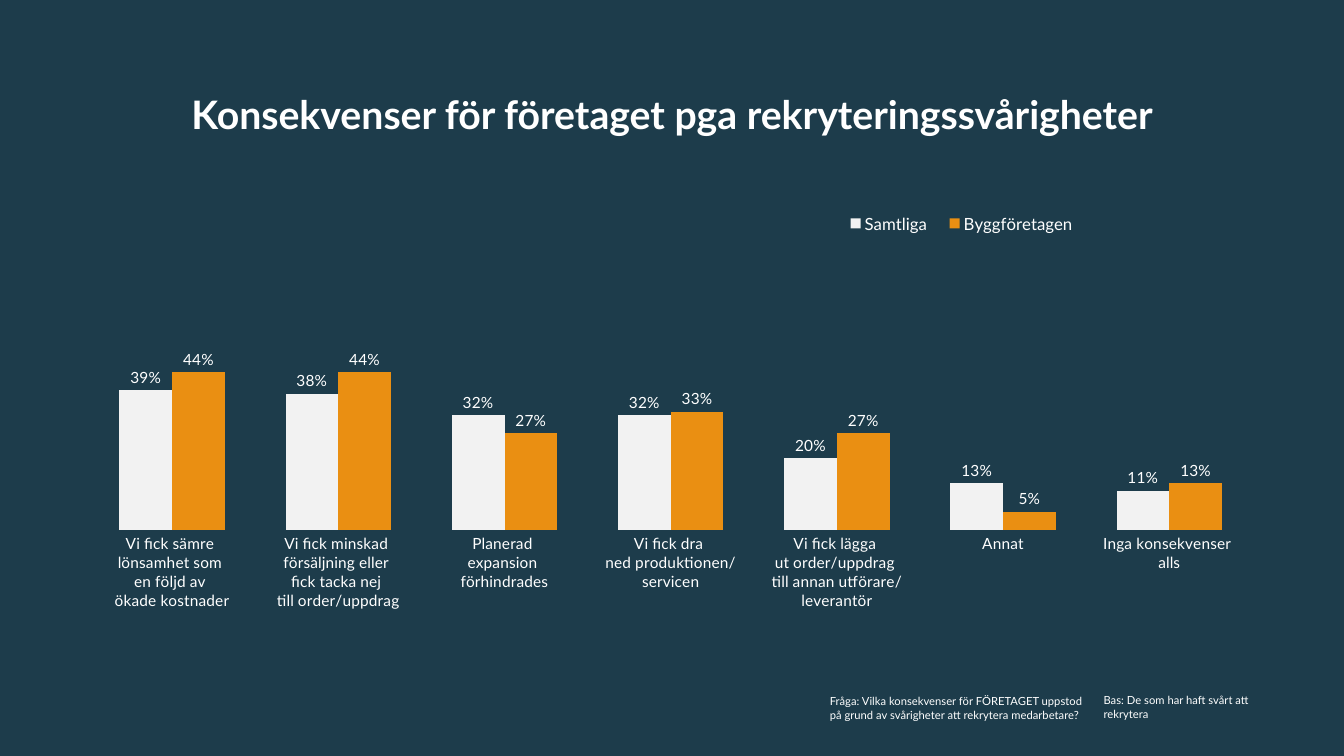
from dataclasses import dataclass

from lxml.etree import SubElement
from pptx import Presentation
from pptx.chart.data import CategoryChartData
from pptx.dml.color import RGBColor
from pptx.enum.chart import XL_CHART_TYPE as ChartType
from pptx.enum.chart import XL_LABEL_POSITION as LabelPosition
from pptx.enum.chart import XL_LEGEND_POSITION as LegendPosition
from pptx.enum.chart import XL_TICK_MARK as TickMark
from pptx.enum.text import MSO_ANCHOR as Anchor
from pptx.enum.text import MSO_AUTO_SIZE as AutoSize
from pptx.enum.text import PP_ALIGN as Align
from pptx.oxml.ns import qn
from pptx.util import Inches, Pt

WIDTH, HEIGHT = Inches(13.33), Inches(7.5)
COLUMNS, ROWS = 16, 9
NAVY, WHITE = "1D3C4B", "FFFFFF"
PERCENT = r"##0\%"


@dataclass(frozen=True)
class Area:
    column: float
    row: float
    columns: float
    rows: float

    def box(self) -> tuple[int, int, int, int]:
        """Left, top, width and height on the slide."""
        across, down = WIDTH / COLUMNS, HEIGHT / ROWS
        return (round(self.column * across), round(self.row * down),
                round(self.columns * across), round(self.rows * down))


@dataclass(frozen=True)
class Note:
    text: str
    area: Area


@dataclass(frozen=True)
class Group:
    name: str
    color: str
    values: tuple[int, ...]


TITLE = Note("Konsekvenser för företaget pga rekryteringssvårigheter", Area(0, 0.84, 16, 1.09))
NOTES = (
    Note("Bas: De som har haft svårt att rekrytera", Area(13.02, 8.2, 2.41, 0.44)),
    Note("Fråga: Vilka konsekvenser för FÖRETAGET uppstod på grund av "
         "svårigheter att rekrytera medarbetare?", Area(9.76, 8.21, 3.35, 0.62)),
)
CHART_AREA = Area(1.06, 1.94, 13.85, 5.33)
CONSEQUENCES = (
    "Vi fick sämre \nlönsamhet som \nen följd av \nökade kostnader",
    "Vi fick minskad \nförsäljning eller \nfick tacka nej \ntill order/uppdrag",
    "Planerad \nexpansion \nförhindrades",
    "Vi fick dra \nned produktionen/\nservicen",
    "Vi fick lägga \nut order/uppdrag \ntill annan utförare/\nleverantör",
    "Annat",
    "Inga konsekvenser \nalls",
)
GROUPS = (
    Group("Samtliga", "F2F2F2", (39, 38, 32, 32, 20, 13, 11)),
    Group("Byggföretagen", "EA8F12", (44, 44, 27, 33, 27, 5, 13)),
)


def rgb(color: str) -> RGBColor:
    return RGBColor.from_string(color)


def apply(target, values: dict) -> None:
    for name, value in values.items():
        setattr(target, name, value)


def format_font(font, size: float, bold: bool = False) -> None:
    apply(font, {"name": "Lato", "size": Pt(size), "bold": bold})
    font.color.rgb = rgb(WHITE)


def place(shape, area: Area) -> None:
    apply(shape, dict(zip(("left", "top", "width", "height"), area.box())))


def set_layout(parent, shares: tuple[float, ...], inner: bool = False) -> None:
    """Give a chart part a fixed x, y, width and height as shares of the chart."""
    layout = parent.find(qn("c:layout"))
    if layout is None:
        layout = parent.makeelement(qn("c:layout"))
        if inner:
            parent.insert(0, layout)
        else:
            parent.find(qn("c:legendPos")).addnext(layout)
    manual = SubElement(layout, qn("c:manualLayout"))
    settings = [("layoutTarget", "inner")] if inner else []
    settings += [("xMode", "edge"), ("yMode", "edge")]
    settings += zip("xywh", shares)
    for tag, value in settings:
        SubElement(manual, qn(f"c:{tag}")).set("val", str(value))


def add_title(slide) -> None:
    title = slide.shapes.title
    place(title, TITLE.area)
    frame = title.text_frame
    frame.text = TITLE.text
    apply(frame, {"vertical_anchor": Anchor.MIDDLE, "word_wrap": True})
    paragraph = frame.paragraphs[0]
    apply(paragraph, {"alignment": Align.CENTER, "line_spacing": 0.9})
    format_font(paragraph.runs[0].font, 28, True)


def add_note(slide, note: Note) -> None:
    frame = slide.shapes.add_textbox(*note.area.box()).text_frame
    frame.text = note.text
    apply(frame, {"word_wrap": True, "auto_size": AutoSize.SHAPE_TO_FIT_TEXT})
    format_font(frame.paragraphs[0].runs[0].font, 8)


def add_bars(slide) -> None:
    data = CategoryChartData(number_format=PERCENT)
    data.categories = CONSEQUENCES
    for group in GROUPS:
        data.add_series(group.name, group.values)
    chart = slide.shapes.add_chart(
        ChartType.COLUMN_CLUSTERED, *CHART_AREA.box(), data).chart
    apply(chart, {"has_title": False, "has_legend": True})
    format_font(chart.font, 14)

    apply(chart.value_axis, {"visible": False, "minimum_scale": 0, "maximum_scale": 100,
                             "major_unit": 20, "has_major_gridlines": False})
    axis = chart.category_axis
    apply(axis, {"major_tick_mark": TickMark.NONE, "minor_tick_mark": TickMark.NONE})
    axis.format.line.fill.background()
    format_font(axis.tick_labels.font, 11)

    legend = chart.legend
    apply(legend, {"position": LegendPosition.RIGHT, "include_in_layout": False})
    format_font(legend.font, 12)

    plot = chart.plots[0]
    apply(plot, {"gap_width": 115, "overlap": 0, "vary_by_categories": False})
    for group, series in zip(GROUPS, plot.series):
        series.format.fill.solid()
        series.format.fill.fore_color.rgb = rgb(group.color)
        labels = series.data_labels
        apply(labels, {"show_value": True, "position": LabelPosition.OUTSIDE_END,
                       "number_format": PERCENT, "number_format_is_linked": False})
        format_font(labels.font, 11)

    set_layout(chart.element.find(".//" + qn("c:plotArea")), (0, 0.02, 1, 0.8), True)
    set_layout(chart.element.find(".//" + qn("c:legend")), (0.64, 0.09, 0.22, 0.09))


def main() -> None:
    presentation = Presentation()
    apply(presentation, {"slide_width": WIDTH, "slide_height": HEIGHT})
    slide = presentation.slides.add_slide(presentation.slide_layouts.get_by_name("Title Only"))
    background = slide.background.fill
    background.solid()
    background.fore_color.rgb = rgb(NAVY)
    add_bars(slide)
    add_title(slide)
    for note in NOTES:
        add_note(slide, note)
    presentation.save("out.pptx")


if __name__ == "__main__":
    main()
